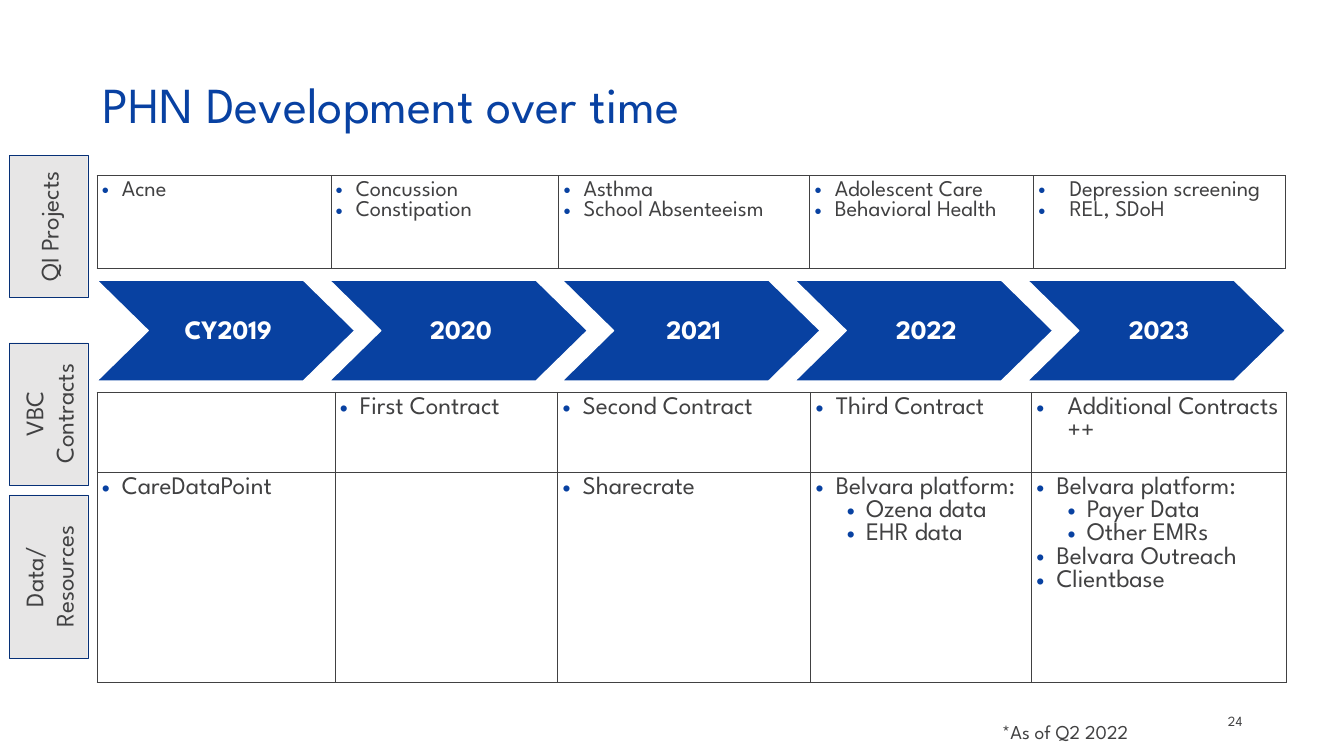
from lxml.etree import SubElement as Sub
from pptx import Presentation
from pptx.dml.color import RGBColor as Rgb
from pptx.enum.shapes import MSO_SHAPE as Kind
from pptx.enum.text import MSO_ANCHOR as Anchor, MSO_AUTO_SIZE as Fit, PP_ALIGN as Align
from pptx.oxml.ns import qn
from pptx.util import Inches, Pt

HUES = {
    "title": "0841A2",
    "blue": "0841A1",
    "ink": "414142",
    "page": "424243",
    "white": "FFFFFF",
    "gray": "E7E6E6",
    "edge": "063077",
}
FACE = "League Spartan"

YEARS = ["CY2019", "2020", "2021", "2022", "2023"]
TABS = [
    ("QI Projects", 1.54, 1.41),
    ("VBC Contracts", 3.4, 1.41),
    ("Data/ Resources", 4.91, 1.62),
]
QUALITY = [[
    ["Acne"],
    ["Concussion", "Constipation"],
    ["Asthma", "School Absenteeism"],
    ["Adolescent Care", "Behavioral Health"],
    ["Depression screening", "REL, SDoH"],
]]
GROWTH = [
    [
        [],
        ["First Contract"],
        ["Second Contract"],
        ["Third Contract"],
        ["Additional Contracts ++"],
    ],
    [
        ["CareDataPoint"],
        [],
        ["Sharecrate"],
        ["Belvara platform:", ("Ozena data", "EHR data")],
        ["Belvara platform:", ("Payer Data", "Other EMRs"), "Belvara Outreach", "Clientbase"],
    ],
]


class Deck:
    def __init__(self):
        self.show = Presentation()
        self.show.slide_width = Inches(13.33)
        self.show.slide_height = Inches(7.5)
        self.slide = self.show.slides.add_slide(self.show.slide_layouts[5])

    def hue(self, name):
        return Rgb.from_string(HUES[name])

    def style(self, para, size, hue, bold=False, align=Align.LEFT):
        para.alignment = align
        font = para.font
        font.name, font.size, font.bold = FACE, Pt(size), bold
        font.color.rgb = self.hue(hue)

    def title(self, text, left, top, width, height):
        shape = self.slide.shapes.title
        shape.left, shape.top = Inches(left), Inches(top)
        shape.width, shape.height = Inches(width), Inches(height)
        frame = shape.text_frame
        frame.text = text
        frame.auto_size = Fit.NONE
        frame.vertical_anchor = Anchor.MIDDLE
        para = frame.paragraphs[0]
        para.line_spacing = 1.2
        self.style(para, 36, "title")

    def label(self, text, left, top, width, height, size, hue, align, anchor):
        box = self.slide.shapes.add_textbox(
            Inches(left), Inches(top), Inches(width), Inches(height))
        frame = box.text_frame
        frame.word_wrap = True
        frame.vertical_anchor = anchor
        frame.text = text
        self.style(frame.paragraphs[0], size, hue, align=align)

    def block(self, kind, text, left, top, width, height, fill, line, weight, size, hue, bold):
        shape = self.slide.shapes.add_shape(
            kind, Inches(left), Inches(top), Inches(width), Inches(height))
        shape.shadow.inherit = False
        shape.fill.solid()
        shape.fill.fore_color.rgb = self.hue(fill)
        shape.line.color.rgb = self.hue(line)
        shape.line.width = Pt(weight)
        frame = shape.text_frame
        frame.word_wrap = True
        frame.vertical_anchor = Anchor.MIDDLE
        frame.text = text
        self.style(frame.paragraphs[0], size, hue, bold, Align.CENTER)
        return shape

    def tab(self, text, top, height):
        shape = self.block(Kind.RECTANGLE, text, 0.09, top, 0.78, height,
                           "gray", "edge", 0.25, 18, "ink", False)
        shape.text_frame._txBody.bodyPr.set("vert", "vert270")

    def arrow(self, text, left):
        shape = self.block(Kind.CHEVRON, text, left, 2.78, 2.56, 1,
                           "blue", "white", 1, 19, "white", True)
        shape.adjustments[0] = 0.51
        frame = shape.text_frame
        frame.margin_left, frame.margin_right = Inches(0.07), Inches(0.02)
        frame.margin_top = frame.margin_bottom = Inches(0.03)
        frame.paragraphs[0].line_spacing = 0.9

    def bullet(self, para, left, hang):
        props = para._p.get_or_add_pPr()
        props.set("marL", str(Inches(left)))
        props.set("indent", str(-Inches(hang)))
        tint = Sub(props, qn("a:buClr"))
        Sub(tint, qn("a:srgbClr"), val=HUES["blue"])
        Sub(props, qn("a:buSzPct"), val="90000")
        Sub(props, qn("a:buFont"), typeface="Arial")
        Sub(props, qn("a:buChar"), char="•")

    def border(self, cell):
        props = cell._tc.get_or_add_tcPr()
        for side in ("lnL", "lnR", "lnT", "lnB"):
            line = Sub(props, qn("a:" + side), w=str(Pt(0.25)))
            fill = Sub(line, qn("a:solidFill"))
            Sub(fill, qn("a:srgbClr"), val=HUES["ink"])

    def fill(self, cell, items, size, wide):
        self.border(cell)
        cell.fill.solid()
        cell.fill.fore_color.rgb = self.hue("white")
        cell.margin_left = cell.margin_right = Inches(0.05)
        cell.margin_top = cell.margin_bottom = Inches(0.05)
        base = 0.31 if wide else 0.2
        lines = []
        for item in items:
            if isinstance(item, tuple):
                lines += [(text, 0.5, 0.19) for text in item]
            else:
                lines.append((item, base, base))
        frame = cell.text_frame
        for num, (text, left, hang) in enumerate(lines):
            para = frame.add_paragraph() if num else frame.paragraphs[0]
            para.text = text
            self.bullet(para, left, hang)
            self.style(para, size, "ink")

    def table(self, data, top, cols, rows, size):
        grid = self.slide.shapes.add_table(
            len(rows), len(cols), Inches(0.96), Inches(top),
            Inches(sum(cols)), Inches(sum(rows))).table
        grid.first_row = grid.horz_banding = False
        for col, width in zip(grid.columns, cols):
            col.width = Inches(width)
        for row, height, cells in zip(grid.rows, rows, data):
            row.height = Inches(height)
            for num, items in enumerate(cells):
                flat = all(isinstance(item, str) for item in items)
                wide = flat and num == len(cols) - 1
                self.fill(row.cells[num], items, size, wide)


def main():
    deck = Deck()
    deck.title("PHN Development over time", 0.92, 0.4, 11.5, 1.14)
    deck.label("24", 9.42, 6.95, 3, 0.4, 10, "page", Align.RIGHT, Anchor.MIDDLE)
    first, last = 0.96, 10.19
    step = (last - first) / (len(YEARS) - 1)
    for num, year in enumerate(YEARS):
        deck.arrow(year, first + num * step)
    deck.table(GROWTH, 3.89, [2.36, 2.21, 2.51, 2.19, 2.53], [0.79, 2.09], 18)
    deck.table(QUALITY, 1.74, [2.32, 2.26, 2.49, 2.22, 2.5], [0.92], 16)
    for tab in TABS:
        deck.tab(*tab)
    deck.label("*As of Q2 2022", 9.84, 7.09, 2.61, 0.34, 14, "ink", Align.LEFT, Anchor.TOP)
    deck.show.save("out.pptx")


if __name__ == "__main__":
    main()
